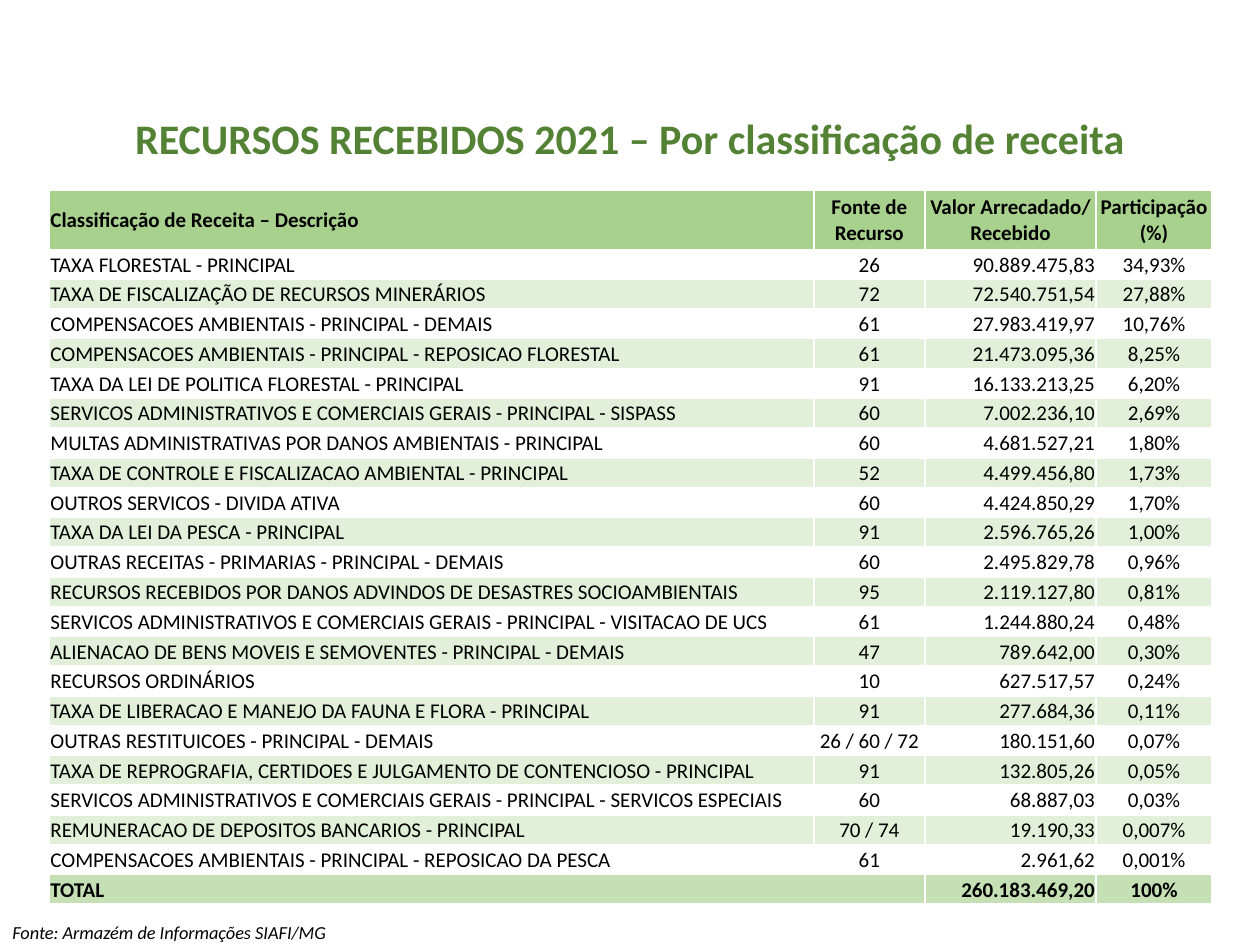
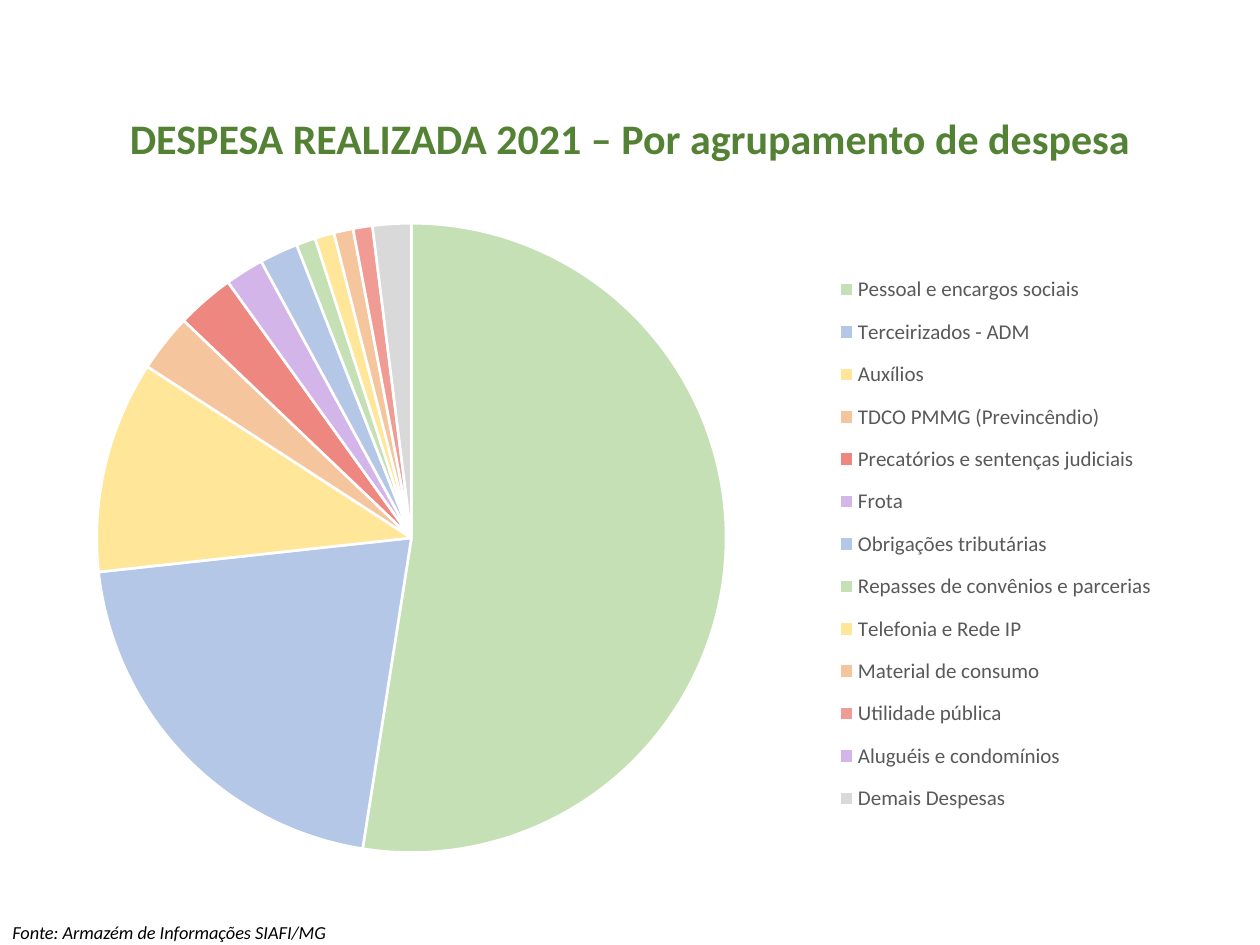
from typing import Any, NamedTuple

from lxml import etree
from pptx import Presentation
from pptx.chart.data import CategoryChartData
from pptx.dml.color import RGBColor
from pptx.enum.chart import XL_CHART_TYPE, XL_LEGEND_POSITION
from pptx.enum.text import MSO_ANCHOR, PP_ALIGN
from pptx.oxml import parse_xml
from pptx.oxml.ns import nsdecls, qn
from pptx.util import Emu, Pt

PIE = XL_CHART_TYPE.PIE
LEGEND_BOTTOM = XL_LEGEND_POSITION.BOTTOM
MIDDLE = MSO_ANCHOR.MIDDLE
LEFT, CENTER, RIGHT = PP_ALIGN.LEFT, PP_ALIGN.CENTER, PP_ALIGN.RIGHT

EMU_PER_PX = 9144  # 100 px to the inch
FONT = "Calibri"
COLORS = {
    "title": "548235", "text": "000000", "legend": "595959", "white": "FFFFFF",
    "header": "A9D18E", "band": "E2F0D9", "total": "C5E0B4",
    "green": "C5E0B4", "blue": "B4C7E7", "yellow": "FFE699", "orange": "F5C59D",
    "red": "ED877F", "light_red": "F09B94", "lilac": "D3B5E9", "grey": "D9D9D9",
}
TITLE_FONT = {"name": FONT, "size": Pt(24), "bold": True}
SOURCE_FONT = {"name": FONT, "size": Pt(10.5), "italic": True}
BODY_FONT = {"name": FONT, "size": Pt(12), "bold": False}
STRONG_FONT = {**BODY_FONT, "bold": True}


class Box(NamedTuple):
    left: int
    top: int
    width: int
    height: int


class Revenue(NamedTuple):
    description: str
    source: str
    amount: str
    share: str


class Expense(NamedTuple):
    group: str
    percent: int
    color: str


TITLE_BOX = Box(50, 72, 900, 79)
SOURCE_BOX = Box(0, 730, 795, 20)
TABLE_BOX = Box(39, 151, 923, 567)
CHART_BOX = Box(50, 176, 892, 502)
COLUMN_WIDTHS = (607, 88, 136, 92)
COLUMN_ALIGNMENTS = (LEFT, CENTER, RIGHT, CENTER)
HEADER_HEIGHT = 47

SOURCE_NOTE = "Fonte: Armazém de Informações SIAFI/MG"
HEADER = Revenue("Classificação de Receita – Descrição", "Fonte de Recurso",
                 "Valor Arrecadado/ Recebido", "Participação\n(%)")
TOTAL = Revenue("TOTAL", "", "260.183.469,20", "100%")
SERVICES = "SERVICOS ADMINISTRATIVOS E COMERCIAIS GERAIS - PRINCIPAL"
COMPENSATIONS = "COMPENSACOES AMBIENTAIS - PRINCIPAL"
REVENUES = [
    Revenue("TAXA FLORESTAL - PRINCIPAL", "26", "90.889.475,83", "34,93%"),
    Revenue("TAXA DE FISCALIZAÇÃO DE RECURSOS MINERÁRIOS", "72", "72.540.751,54", "27,88%"),
    Revenue(f"{COMPENSATIONS} - DEMAIS", "61", "27.983.419,97", "10,76%"),
    Revenue(f"{COMPENSATIONS} - REPOSICAO FLORESTAL", "61", "21.473.095,36", "8,25%"),
    Revenue("TAXA DA LEI DE POLITICA FLORESTAL - PRINCIPAL", "91", "16.133.213,25", "6,20%"),
    Revenue(f"{SERVICES} - SISPASS", "60", "7.002.236,10", "2,69%"),
    Revenue("MULTAS ADMINISTRATIVAS POR DANOS AMBIENTAIS - PRINCIPAL", "60",
            "4.681.527,21", "1,80%"),
    Revenue("TAXA DE CONTROLE E FISCALIZACAO AMBIENTAL - PRINCIPAL", "52",
            "4.499.456,80", "1,73%"),
    Revenue("OUTROS SERVICOS - DIVIDA ATIVA", "60", "4.424.850,29", "1,70%"),
    Revenue("TAXA DA LEI DA PESCA - PRINCIPAL", "91", "2.596.765,26", "1,00%"),
    Revenue("OUTRAS RECEITAS - PRIMARIAS - PRINCIPAL - DEMAIS", "60", "2.495.829,78", "0,96%"),
    Revenue("RECURSOS RECEBIDOS POR DANOS ADVINDOS DE DESASTRES SOCIOAMBIENTAIS", "95",
            "2.119.127,80", "0,81%"),
    Revenue(f"{SERVICES} - VISITACAO DE UCS", "61", "1.244.880,24", "0,48%"),
    Revenue("ALIENACAO DE BENS MOVEIS E SEMOVENTES - PRINCIPAL - DEMAIS", "47",
            "789.642,00", "0,30%"),
    Revenue("RECURSOS ORDINÁRIOS", "10", "627.517,57", "0,24%"),
    Revenue("TAXA DE LIBERACAO E MANEJO DA FAUNA E FLORA - PRINCIPAL", "91",
            "277.684,36", "0,11%"),
    Revenue("OUTRAS RESTITUICOES - PRINCIPAL - DEMAIS", "26 / 60 / 72", "180.151,60", "0,07%"),
    Revenue("TAXA DE REPROGRAFIA, CERTIDOES E JULGAMENTO DE CONTENCIOSO - PRINCIPAL", "91",
            "132.805,26", "0,05%"),
    Revenue(f"{SERVICES} - SERVICOS ESPECIAIS", "60", "68.887,03", "0,03%"),
    Revenue("REMUNERACAO DE DEPOSITOS BANCARIOS - PRINCIPAL", "70 / 74", "19.190,33", "0,007%"),
    Revenue(f"{COMPENSATIONS} - REPOSICAO DA PESCA", "61", "2.961,62", "0,001%"),
]
EXPENSES = [
    Expense("Pessoal e encargos sociais", 53, "green"),
    Expense("Terceirizados - ADM", 21, "blue"),
    Expense("Auxílios", 11, "yellow"),
    Expense("TDCO PMMG (Previncêndio)", 3, "orange"),
    Expense("Precatórios e sentenças judiciais", 3, "red"),
    Expense("Frota", 2, "lilac"),
    Expense("Obrigações tributárias", 2, "blue"),
    Expense("Repasses de convênios e parcerias", 1, "green"),
    Expense("Telefonia e Rede IP", 1, "yellow"),
    Expense("Material de consumo", 1, "orange"),
    Expense("Utilidade pública", 1, "light_red"),
    Expense("Aluguéis e condomínios", 0, "lilac"),
    Expense("Demais Despesas", 2, "grey"),
]


def px(length: int) -> Emu:
    return Emu(length * EMU_PER_PX)


def place(box: Box) -> tuple[Emu, ...]:
    return tuple(px(length) for length in box)


def rgb(color: str) -> RGBColor:
    return RGBColor.from_string(COLORS[color])


def format_font(font: Any, values: dict[str, Any], color: str) -> None:
    for attribute, value in values.items():
        setattr(font, attribute, value)
    font.color.rgb = rgb(color)


def add_line(slide: Any, box: Box, text: str, font: dict[str, Any], color: str,
             alignment: Any = LEFT, spacing: float = 1.0) -> None:
    """Add a text box with one vertically centred paragraph."""
    frame = slide.shapes.add_textbox(*place(box)).text_frame
    frame.word_wrap = True
    frame.vertical_anchor = MIDDLE
    paragraph = frame.paragraphs[0]
    paragraph.text = text
    paragraph.alignment = alignment
    paragraph.line_spacing = spacing
    format_font(paragraph.runs[0].font, font, color)


def add_titled_slide(deck: Any, title: str) -> Any:
    slide = deck.slides.add_slide(deck.slide_layouts[6])
    add_line(slide, TITLE_BOX, title, TITLE_FONT, "title", CENTER, 0.9)
    add_line(slide, SOURCE_BOX, SOURCE_NOTE, SOURCE_FONT, "text")
    return slide


def add_borders(cell: Any) -> None:
    properties = cell._tc.get_or_add_tcPr()
    for side in ("lnL", "lnR", "lnT", "lnB"):
        properties.append(parse_xml(
            f'<a:{side} {nsdecls("a")} w="{Pt(1)}"><a:solidFill>'
            f'<a:srgbClr val="{COLORS["white"]}"/></a:solidFill></a:{side}>'))


def fill_row(row: Any, revenue: Revenue, fill: str, font: dict[str, Any],
             alignments: tuple[Any, ...] = COLUMN_ALIGNMENTS) -> None:
    margins = {"margin_left": px(1), "margin_right": px(1), "margin_top": px(1),
               "margin_bottom": px(0), "vertical_anchor": MIDDLE}
    for cell, text, alignment in zip(row.cells, revenue, alignments):
        for attribute, value in margins.items():
            setattr(cell, attribute, value)
        add_borders(cell)
        cell.fill.solid()
        cell.fill.fore_color.rgb = rgb(fill)
        cell.text_frame.text = text
        for paragraph in cell.text_frame.paragraphs:
            paragraph.alignment = alignment
            format_font(paragraph.font, font, "text")
            for run in paragraph.runs:
                format_font(run.font, font, "text")


def add_revenue_table(slide: Any) -> None:
    row_count = len(REVENUES) + 2
    table = slide.shapes.add_table(row_count, len(COLUMN_WIDTHS), *place(TABLE_BOX)).table
    table.first_row = table.horz_banding = False
    for column, width in zip(table.columns, COLUMN_WIDTHS):
        column.width = px(width)
    header_row, *revenue_rows, total_row = table.rows
    header_row.height = px(HEADER_HEIGHT)
    for row in (*revenue_rows, total_row):
        row.height = Emu(px(TABLE_BOX.height - HEADER_HEIGHT) // (row_count - 1))

    fill_row(header_row, HEADER, "header", STRONG_FONT, (LEFT, CENTER, CENTER, CENTER))
    for index, (row, revenue) in enumerate(zip(revenue_rows, REVENUES)):
        fill_row(row, revenue, "band" if index % 2 else "white", BODY_FONT)
    fill_row(total_row, TOTAL, "total", STRONG_FONT)
    total_row.cells[0].merge(total_row.cells[1])


def set_layout(part: Any, before: str, values: dict[str, Any]) -> None:
    """Give a chart part a manual layout, placed ahead of or after the named child."""
    for old_layout in part.findall(qn("c:layout")):
        part.remove(old_layout)
    layout = etree.Element(qn("c:layout"))
    manual = etree.SubElement(layout, qn("c:manualLayout"))
    for tag, value in values.items():
        etree.SubElement(manual, qn(f"c:{tag}")).set("val", str(value))
    part.find(qn(before)).addprevious(layout)


def add_expense_pie(slide: Any) -> None:
    data = CategoryChartData()
    data.categories = [expense.group for expense in EXPENSES]
    data.add_series("Despesa", [expense.percent for expense in EXPENSES])
    chart = slide.shapes.add_chart(PIE, *place(CHART_BOX), data).chart
    chart.has_title = False
    format_font(chart.font, {"name": FONT, "size": Pt(10)}, "text")

    plot = chart.plots[0]
    plot.vary_by_categories = True
    for index, expense in enumerate(EXPENSES):
        slice_format = plot.series[0].points[index].format
        slice_format.fill.solid()
        slice_format.fill.fore_color.rgb = rgb(expense.color)
        slice_format.line.color.rgb = rgb("white")
        slice_format.line.width = Pt(1.5)

    chart.has_legend = True
    legend = chart.legend
    legend.position = LEGEND_BOTTOM
    legend.include_in_layout = False
    format_font(legend.font, BODY_FONT, "legend")
    edges = {"xMode": "edge", "yMode": "edge"}
    set_layout(legend._element, "c:overlay",
               {**edges, "x": 0.67, "y": 0.06, "w": 0.32, "h": 0.9})
    plot_area = chart._chartSpace.chart.plotArea
    set_layout(plot_area, "c:pieChart",
               {"layoutTarget": "inner", **edges, "x": 0.03, "y": 0, "w": 0.56, "h": 1})


def main() -> None:
    deck = Presentation()
    deck.slide_width, deck.slide_height = px(1000), px(750)
    add_revenue_table(add_titled_slide(
        deck, "RECURSOS RECEBIDOS 2021 – Por classificação de receita"))
    add_expense_pie(add_titled_slide(
        deck, "DESPESA REALIZADA 2021 – Por agrupamento de despesa"))
    deck.save("out.pptx")


if __name__ == "__main__":
    main()
